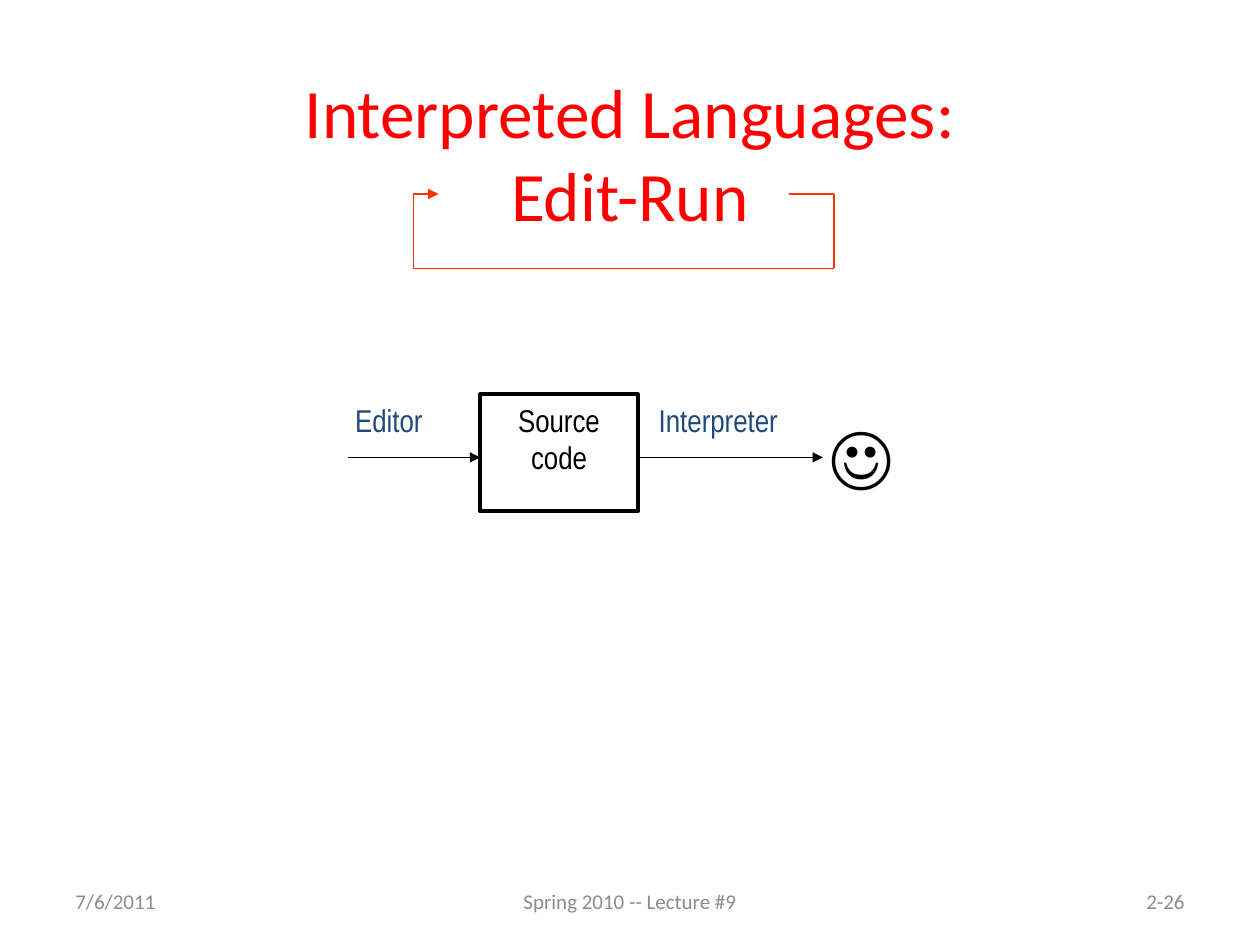
from itertools import pairwise

from lxml.etree import SubElement
from pptx import Presentation
from pptx.dml.color import RGBColor
from pptx.enum.shapes import MSO_CONNECTOR, MSO_SHAPE
from pptx.enum.text import MSO_ANCHOR, PP_ALIGN
from pptx.oxml.ns import qn
from pptx.util import Cm, Pt

BLACK = "000000"
LOOP_RED = "FF3300"
LABEL_BLUE = "1F497D"
FOOTER_GREY = "8C8C8C"


def color(hex_value):
    return RGBColor.from_string(hex_value)


class SlideBuilder:
    heading_font = "Calibri"
    diagram_font = "Arial Narrow"
    thin = Pt(0.75)
    thick = Pt(2.25)

    def __init__(self, slide):
        self.slide = slide

    def fill_text(self, frame, text, size, hex_value, font, align, anchor):
        frame.word_wrap = True
        frame.vertical_anchor = anchor
        frame.text = text
        for paragraph in frame.paragraphs:
            paragraph.alignment = align
            paragraph.font.name = font
            paragraph.font.size = Pt(size)
            paragraph.font.color.rgb = color(hex_value)

    def text(self, box, text, size, hex_value, font=heading_font,
             align=PP_ALIGN.LEFT, anchor=MSO_ANCHOR.TOP):
        label = self.slide.shapes.add_textbox(*map(Cm, box))
        self.fill_text(label.text_frame, text, size, hex_value, font, align, anchor)

    def framed_text(self, box, text, size):
        frame = self.slide.shapes.add_shape(MSO_SHAPE.RECTANGLE, *map(Cm, box))
        frame.shadow.inherit = False
        frame.fill.background()
        frame.line.color.rgb = color(BLACK)
        frame.line.width = self.thick
        self.fill_text(frame.text_frame, text, size, BLACK, self.diagram_font,
                       PP_ALIGN.CENTER, MSO_ANCHOR.TOP)

    def line(self, start, end, hex_value, arrow=False, shapes=None):
        shapes = shapes or self.slide.shapes
        connector = shapes.add_connector(
            MSO_CONNECTOR.STRAIGHT, *map(Cm, (*start, *end)))
        connector.line.color.rgb = color(hex_value)
        connector.line.width = self.thin
        properties = connector._element.spPr
        if arrow:
            SubElement(properties.find(qn("a:ln")), qn("a:tailEnd"), type="triangle")
        SubElement(properties, qn("a:effectLst"))

    def arrow_path(self, points, hex_value):
        group = self.slide.shapes.add_group_shape()
        for start, end in pairwise(points):
            self.line(start, end, hex_value, end == points[-1], group.shapes)


def main():
    presentation = Presentation()
    presentation.slide_width = Cm(25.4)
    presentation.slide_height = Cm(19.05)
    builder = SlideBuilder(
        presentation.slides.add_slide(presentation.slide_layouts[6]))

    builder.text((1.9, 1.88, 21.6, 2.39), "Interpreted Languages:\vEdit-Run",
                 39.6, "FF0000", align=PP_ALIGN.CENTER, anchor=MSO_ANCHOR.MIDDLE)

    loop_left, loop_right = 8.33, 16.81
    loop_top, loop_bottom = 3.91, 5.41
    builder.arrow_path([
        (15.9, loop_top), (loop_right, loop_top), (loop_right, loop_bottom),
        (loop_left, loop_bottom), (loop_left, loop_top), (8.84, loop_top),
    ], LOOP_RED)

    stage_top, flow_y = 7.95, 9.22
    source_left, source_width = 9.68, 3.18
    source_right = source_left + source_width
    for left, width, tool in ((6.91, 2.74, "Editor"), (13.03, 4.01, "Interpreter")):
        builder.text((left, stage_top, width, 1.27), tool, 18, LABEL_BLUE,
                     builder.diagram_font)
    builder.framed_text((source_left, stage_top, source_width, 2.36),
                        "Source\ncode", 18)
    for start, end in ((7.01, source_left), (source_right, 16.59)):
        builder.line((start, flow_y), (end, flow_y), BLACK, arrow=True)
    builder.text((16.48, 8.18, 1.7, 1.96), "☺", 40, BLACK, align=PP_ALIGN.CENTER)

    for left, width, footer, align in (
        (1.27, 5.92, "7/6/2011", PP_ALIGN.LEFT),
        (8.68, 8.04, "Spring 2010 -- Lecture #9", PP_ALIGN.CENTER),
        (18.21, 5.92, "2-26", PP_ALIGN.RIGHT),
    ):
        builder.text((left, 17.65, width, 1.02), footer, 12, FOOTER_GREY,
                     align=align, anchor=MSO_ANCHOR.MIDDLE)

    presentation.save("out.pptx")


if __name__ == "__main__":
    main()
